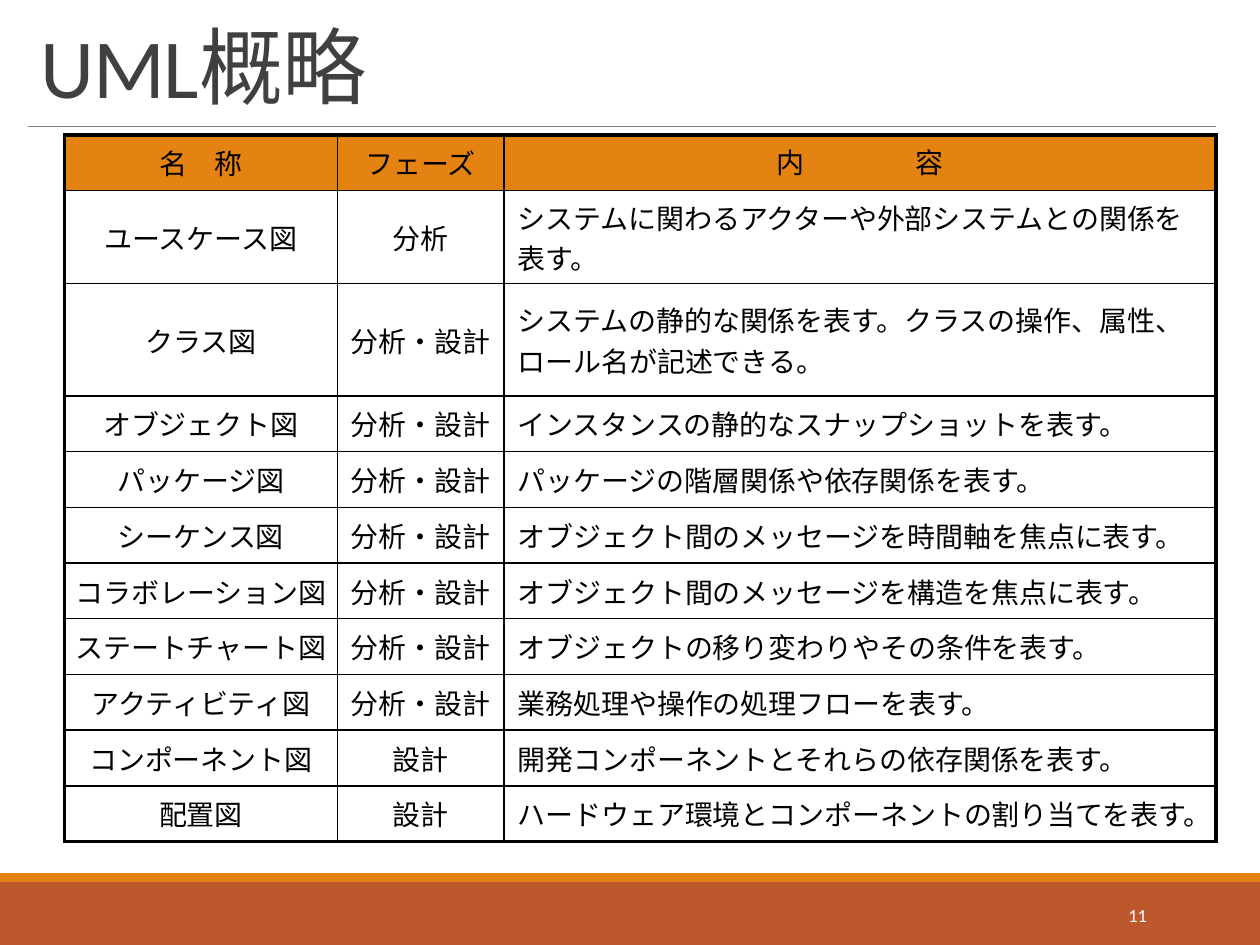
from lxml.etree import SubElement
from pptx import Presentation
from pptx.dml.color import RGBColor
from pptx.enum.shapes import MSO_CONNECTOR, MSO_SHAPE
from pptx.enum.text import MSO_ANCHOR, PP_ALIGN
from pptx.oxml.ns import qn
from pptx.util import Inches, Pt

TITLE = "UML概略"
PAGE_NUMBER = "11"
HEADER = ("名　称", "フェーズ", "内　　　　容")
BOTH = "分析・設計"
DIAGRAMS = [
    ("ユースケース図", "分析", "システムに関わるアクターや外部システムとの関係を表す。"),
    ("クラス図", BOTH, "システムの静的な関係を表す。クラスの操作、属性、ロール名が記述できる。"),
    ("オブジェクト図", BOTH, "インスタンスの静的なスナップショットを表す。"),
    ("パッケージ図", BOTH, "パッケージの階層関係や依存関係を表す。"),
    ("シーケンス図", BOTH, "オブジェクト間のメッセージを時間軸を焦点に表す。"),
    ("コラボレーション図", BOTH, "オブジェクト間のメッセージを構造を焦点に表す。"),
    ("ステートチャート図", BOTH, "オブジェクトの移り変わりやその条件を表す。"),
    ("アクティビティ図", BOTH, "業務処理や操作の処理フローを表す。"),
    ("コンポーネント図", "設計", "開発コンポーネントとそれらの依存関係を表す。"),
    ("配置図", "設計", "ハードウェア環境とコンポーネントの割り当てを表す。"),
]
COLUMN_WIDTHS = (2.17, 1.32, 5.65)
TABLE_HEIGHT = 5.61
TALL_ROWS = {1: 0.74, 2: 0.89}
BANDS = [((0, 7, 10, 0.5), "BD582C"), ((0, 6.93, 10, 0.07), "E48312")]
ORANGE, WHITE, BLACK = "E48312", "FFFFFF", "000000"
THICK, THIN = 2.25, 1
MARGINS = ("margin_left", "margin_top", "margin_right", "margin_bottom")
NAME_INSETS = dict.fromkeys(MARGINS, 0)
TEXT_INSETS = dict(zip(MARGINS, map(Inches, (0.11, 0.05, 0.11, 0.05))))


def rgb(value):
    return RGBColor.from_string(value)


def apply(target, values):
    for name, value in values.items():
        setattr(target, name, value)


def write(paragraph, text, color, font, paragraph_format):
    apply(paragraph, paragraph_format)
    run = paragraph.add_run()
    run.text = text
    apply(run.font, font)
    run.font.color.rgb = rgb(color)
    return run


def add_label(slide, box, text, color, anchor, font, paragraph_format):
    frame = slide.shapes.add_textbox(*map(Inches, box)).text_frame
    apply(frame, {"word_wrap": True, "vertical_anchor": anchor})
    return write(frame.paragraphs[0], text, color, font, paragraph_format)


def add_borders(cell, widths):
    properties = cell._tc.get_or_add_tcPr()
    for side, width in widths.items():
        border = SubElement(properties, qn(f"a:ln{side}"), w=str(Pt(width)))
        fill = SubElement(border, qn("a:solidFill"))
        SubElement(fill, qn("a:srgbClr"), val=BLACK)


def add_diagram_table(slide):
    rows = [HEADER, *DIAGRAMS]
    row_height = (TABLE_HEIGHT - sum(TALL_ROWS.values())) / (len(rows) - len(TALL_ROWS))
    last_row, last_column = len(rows) - 1, len(HEADER) - 1
    table = slide.shapes.add_table(
        len(rows), len(HEADER), Inches(0.51), Inches(1.07),
        Inches(sum(COLUMN_WIDTHS)), Inches(TABLE_HEIGHT)).table
    apply(table, {"first_row": False, "horz_banding": False})
    for column, width in zip(table.columns, COLUMN_WIDTHS):
        column.width = Inches(width)
    for index, row in enumerate(table.rows):
        row.height = Inches(TALL_ROWS.get(index, row_height))
    for r, texts in enumerate(rows):
        for c, text in enumerate(texts):
            cell = table.cell(r, c)
            is_header, is_content = r == 0, c == last_column
            apply(cell, TEXT_INSETS if is_content else NAME_INSETS)
            cell.vertical_anchor = (
                MSO_ANCHOR.TOP if is_header and is_content else MSO_ANCHOR.MIDDLE)
            outer = {"L": c == 0, "R": is_content, "T": is_header, "B": r == last_row}
            add_borders(cell, {side: THICK if edge else THIN
                               for side, edge in outer.items()})
            cell.fill.solid()
            cell.fill.fore_color.rgb = rgb(ORANGE if is_header else WHITE)
            paragraph = cell.text_frame.paragraphs[0]
            centred = is_header or not is_content
            run = write(paragraph, text, BLACK,
                        {"size": Pt(16), "name": "Noto Sans CJK JP"},
                        {"alignment": PP_ALIGN.CENTER if centred else PP_ALIGN.LEFT})
            SubElement(run.font._element, qn("a:ea"), typeface="Noto Sans CJK JP")
            before = SubElement(paragraph._p.get_or_add_pPr(), qn("a:spcBef"))
            SubElement(before, qn("a:spcPct"), val="20000")


def main():
    deck = Presentation()
    apply(deck, {"slide_width": Inches(10), "slide_height": Inches(7.5)})
    slide = deck.slides.add_slide(deck.slide_layouts[6])

    for box, color in BANDS:
        band = slide.shapes.add_shape(MSO_SHAPE.RECTANGLE, *map(Inches, box))
        band.shadow.inherit = False
        band.fill.solid()
        band.fill.fore_color.rgb = rgb(color)
        band.line.fill.background()

    rule = slide.shapes.add_connector(
        MSO_CONNECTOR.STRAIGHT, *map(Inches, (0.22, 1, 9.65, 1)))
    rule.line.color.rgb = rgb("808080")
    rule.line.width = Pt(0.5)
    SubElement(rule._element.spPr, qn("a:effectLst"))

    title = add_label(slide, (0.22, 0.09, 9.43, 0.88), TITLE, "404040",
                      MSO_ANCHOR.BOTTOM, {"size": Pt(48), "name": "Calibri"},
                      {"line_spacing": 0.85})
    title.font._element.set("spc", "-50")
    add_label(slide, (8.12, 7.06, 1.08, 0.4), PAGE_NUMBER, WHITE,
              MSO_ANCHOR.MIDDLE, {"size": Pt(10.5), "name": "Calibri"},
              {"alignment": PP_ALIGN.RIGHT})
    add_diagram_table(slide)
    deck.save("out.pptx")


if __name__ == "__main__":
    main()
